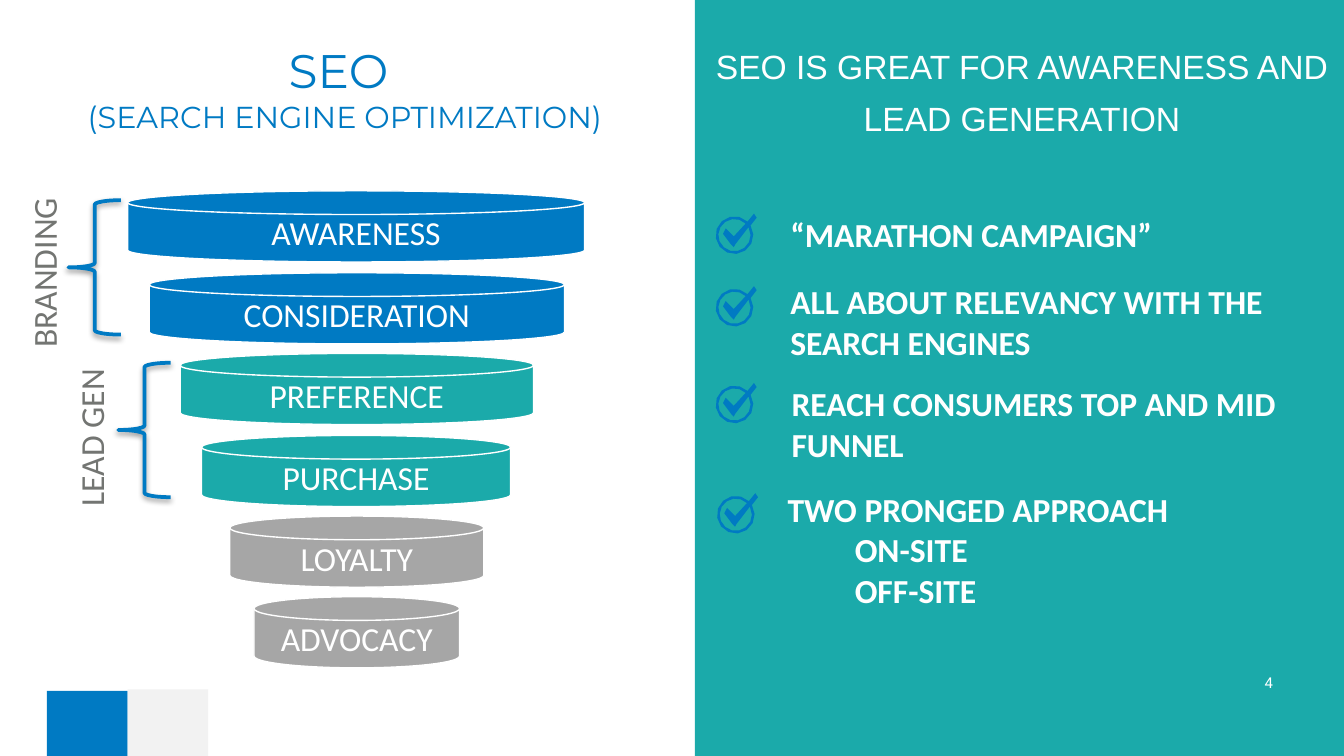
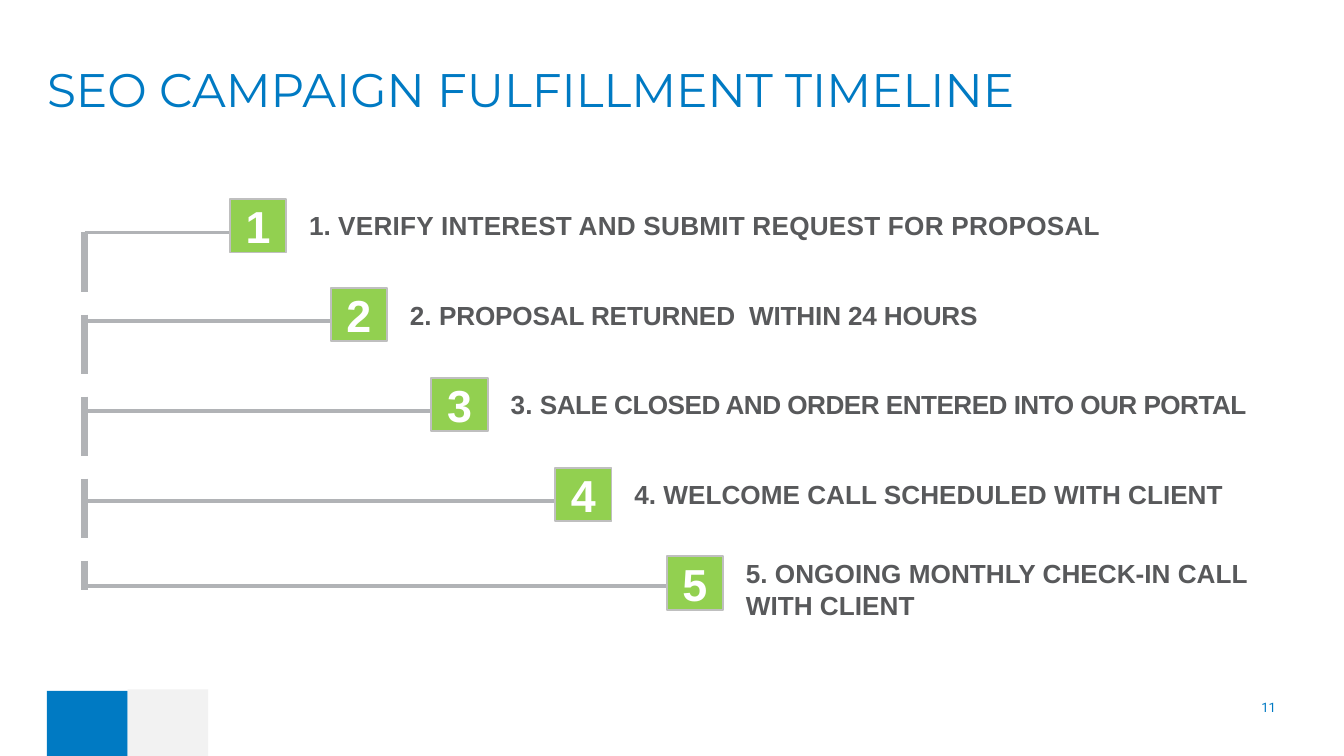
import math

import lxml.etree
import pptx
import pptx.dml.color
import pptx.enum.dml
import pptx.enum.shapes
import pptx.enum.text
import pptx.oxml.ns
import pptx.util

PX = 9144
SHAPES = pptx.enum.shapes.MSO_SHAPE
ALIGN = pptx.enum.text.PP_ALIGN
ANCHOR = pptx.enum.text.MSO_ANCHOR
qn = pptx.oxml.ns.qn

COLORS = {
    "blue": "007AC3",
    "teal": "1BAAAA",
    "gray": "A6A6A6",
    "pale": "F2F2F2",
    "white": "FFFFFF",
    "caption": "737572",
    "ink": "58595B",
    "rail": "B1B3B6",
    "green": "92D050",
    "edge": "BFBFBF",
    "black": "000000",
}

STYLES = {
    "title": ("blue", {"name": "Montserrat", "size": 25.2}),
    "subtitle": ("blue", {"name": "Montserrat", "size": 16.2}),
    "headline": ("white", {"name": "Arial", "size": 18}),
    "stage": ("white", {"name": "Calibri", "size": 18}),
    "phase": ("caption", {"name": "Calibri", "size": 18}),
    "point": ("white", {"name": "Calibri", "size": 18, "bold": True}),
    "badge": ("white", {"name": "Arial", "size": 24, "bold": True}),
    "step": ("ink", {"name": "Arial", "size": 14, "bold": True}),
    "number on panel": ("white", {"name": "Roboto", "size": 8}),
    "number": ("blue", {"name": "Roboto", "size": 7}),
}


def px(length):
    return pptx.util.Emu(round(length * PX))


def rgb(color):
    return pptx.dml.color.RGBColor.from_string(COLORS[color])


def assign(target, values):
    for attribute, value in values.items():
        setattr(target, attribute, value)


class Deck:
    def __init__(self):
        self.presentation = pptx.Presentation()
        self.presentation.slide_width = px(1000)
        self.presentation.slide_height = px(562.5)

    def start(self, layout):
        self.slide = self.presentation.slides.add_slide(
            self.presentation.slide_layouts.get_by_name(layout))
        self.shapes = self.slide.shapes
        self.block((35, 514, 60, 50), "blue")
        self.block((95, 513, 60, 50), "pale")

    def finish_shape(self, shape, fill=None, line=None, width=0.75):
        shape.shadow.inherit = False
        if fill:
            shape.fill.solid()
            shape.fill.fore_color.rgb = rgb(fill)
        else:
            shape.fill.background()
        if line:
            shape.line.color.rgb = rgb(line)
            shape.line.width = pptx.util.Pt(width)
        else:
            shape.line.fill.background()
        return shape

    def block(self, box, fill=None, line=None, width=0.75, kind=SHAPES.RECTANGLE):
        shape = self.shapes.add_shape(kind, *map(px, box))
        return self.finish_shape(shape, fill, line, width)

    def frame(self, shape, insets=(10, 5), anchor=ANCHOR.TOP, wrap=True):
        across, down = map(px, insets)
        assign(shape.text_frame, {
            "margin_left": across, "margin_right": across,
            "margin_top": down, "margin_bottom": down,
            "vertical_anchor": anchor, "word_wrap": wrap,
            "auto_size": pptx.enum.text.MSO_AUTO_SIZE.NONE,
        })

    def run(self, paragraph, words, style, tracking=0):
        run = paragraph.add_run()
        run.text = words
        color, values = STYLES[style]
        assign(run.font, {**values, "size": pptx.util.Pt(values["size"])})
        run.font.color.rgb = rgb(color)
        if tracking:
            run.font._element.set("spc", str(tracking))

    def paragraph(self, shape, words, style, align=ALIGN.LEFT, before=0, spacing=1.0):
        text = shape.text_frame
        paragraph = text.paragraphs[0] if not text.text else text.add_paragraph()
        assign(paragraph, {"alignment": align, "line_spacing": spacing,
                           "space_before": pptx.util.Pt(before)})
        self.run(paragraph, words, style)
        return paragraph

    def label(self, box, words, style, align=ALIGN.LEFT, spacing=1.0, **framing):
        shape = self.shapes.add_textbox(*map(px, box))
        self.frame(shape, **framing)
        self.paragraph(shape, words, style, align, spacing=spacing)
        return shape

    def place(self, shape, box):
        assign(shape, dict(zip(("left", "top", "width", "height"), map(px, box))))
        self.frame(shape)

    def title(self, box, words, subtitle=None, align=ALIGN.LEFT):
        heading = self.shapes.title
        self.place(heading, box)
        paragraph = self.paragraph(heading, words, "title", align)
        if subtitle:
            paragraph.add_line_break()
            lxml.etree.SubElement(paragraph._p[-1], qn("a:rPr"), sz="2520")
            self.run(paragraph, subtitle, "subtitle")

    def points(self, box, items):
        body = self.slide.placeholders[1]
        body.element.getparent().append(body.element)
        self.place(body, box)
        for words, before, indent in items:
            paragraph = self.paragraph(body, words, "point", before=before)
            properties = paragraph._p.get_or_add_pPr()
            properties.set("marL", str(px(indent)))
            properties.set("indent", "0")
            lxml.etree.SubElement(properties, qn("a:buNone"))

    def page_number(self, top, number, style):
        self.label((925, top, 38, 30), number, style, ALIGN.CENTER, anchor=ANCHOR.MIDDLE)

    def brace(self, box):
        brace = self.block(box, line="blue", width=2, kind=SHAPES.LEFT_BRACE)
        effects = brace.element.spPr.find(qn("a:effectLst"))
        shadow = lxml.etree.SubElement(effects, qn("a:outerShdw"), blurRad="39370",
                                       dist="20320", dir="5400000", rotWithShape="0")
        tint = lxml.etree.SubElement(shadow, qn("a:srgbClr"), val=COLORS["black"])
        lxml.etree.SubElement(tint, qn("a:alpha"), val="38000")

    def check(self, left, top):
        def arc(radius, first, last, steps=12):
            turns = [math.radians(first + (last - first) * i / steps)
                     for i in range(steps + 1)]
            return [(13.5 + radius * math.cos(t), 16 + radius * math.sin(t)) for t in turns]

        ring = [(30, 3), (28, 0)] + arc(14, -46, -391)
        tick = arc(12, 0, 314) + [(13, 17), (7, 11), (5, 15), (11, 23),
                                  (13, 25), (14, 23), (24, 10)]
        ring, tick = ([(px(left + x), px(top + y)) for x, y in outline]
                      for outline in (ring, tick))
        builder = self.shapes.build_freeform(*ring[0])
        builder.add_line_segments(ring[1:])
        builder.move_to(*tick[0])
        builder.add_line_segments(tick[1:])
        self.finish_shape(builder.convert_to_shape(), "blue")

    def rule(self, start, end, width, dash=None):
        rule = self.shapes.add_connector(
            pptx.enum.shapes.MSO_CONNECTOR.STRAIGHT, *map(px, start + end))
        rule.line.color.rgb = rgb("rail")
        assign(rule.line, {"width": pptx.util.Pt(width), "dash_style": dash})
        lxml.etree.SubElement(rule.element.spPr, qn("a:effectLst"))


def build_funnel(deck):
    deck.start("Title and Content")
    deck.block((517, 0, 483, 563), "teal")
    deck.label((521, 21, 479, 86), "SEO IS GREAT FOR AWARENESS AND LEAD GENERATION",
               "headline", ALIGN.CENTER, spacing=1.3, insets=(7, 4))
    deck.page_number(493, "4", "number on panel")
    deck.title((25, 26, 463, 36), "SEO ", "(SEARCH ENGINE OPTIMIZATION)", ALIGN.CENTER)

    stages = [
        ("AWARENESS", 340, "blue"),
        ("CONSIDERATION", 309, "blue"),
        ("PREFERENCE", 263, "teal"),
        ("PURCHASE", 230, "teal"),
        ("LOYALTY", 189, "gray"),
        ("ADVOCACY", 153, "gray"),
    ]
    for i, (stage, width, fill) in enumerate(stages):
        disk = deck.block((265 - width // 2, round(142.4 + 60.4 * i), width, 53),
                          fill, "white", kind=SHAPES.FLOWCHART_MAGNETIC_DISK)
        deck.frame(disk, anchor=ANCHOR.MIDDLE)
        deck.paragraph(disk, stage, "stage", ALIGN.CENTER)

    for phase, brace, box in (
        ("BRANDING", (51, 149, 39, 100), (-34, 182, 133, 40)),
        ("LEAD GEN", (88, 270, 39, 100), (6, 305, 123, 40)),
    ):
        deck.brace(brace)
        deck.label(box, phase, "phase", wrap=False).rotation = 270

    for left, top in ((533, 159), (533, 213), (533, 285), (534, 367)):
        deck.check(left, top)
    deck.points((576, 154, 416, 306), [
        ("“MARATHON CAMPAIGN”", 0, 2),
        ("ALL ABOUT RELEVANCY WITH THE SEARCH ENGINES", 14.5, 2),
        ("REACH CONSUMERS TOP AND MID FUNNEL", 11.5, 3),
        ("TWO PRONGED APPROACH", 13.5, 0),
        ("ON-SITE", 0, 50),
        ("OFF-SITE", 0, 50),
    ])


def build_timeline(deck):
    deck.start("Title Only")
    deck.page_number(511, "11", "number")
    deck.title((25, 40, 938, 36), "SEO CAMPAIGN FULFILLMENT TIMELINE")

    rail = 63
    deck.rule((rail, 173), (rail, 439), 4, pptx.enum.dml.MSO_LINE.LONG_DASH)
    steps = [
        ("VERIFY INTEREST AND SUBMIT REQUEST FOR PROPOSAL", 171, 173, 156, 664, 10),
        ("PROPOSAL RETURNED  WITHIN 24 HOURS", 246, 239, 223, 489, -10),
        ("SALE CLOSED AND ORDER ENTERED INTO OUR PORTAL", 321, 306, 289, 558, -30),
        ("WELCOME CALL SCHEDULED WITH CLIENT", 413, 373, 356, 492, 0),
        ("ONGOING MONTHLY CHECK-IN CALL WITH CLIENT", 496, 436, 415, 408, 0),
    ]
    for i, (step, left, level, top, width, tracking) in enumerate(steps):
        number = str(i + 1)
        deck.rule((rail, level), (left, level), 2)
        badge = deck.block((left, round(148 + 66.5 * i), 42, 40), "green", "edge", 1)
        deck.frame(badge, insets=(0, 0))
        deck.paragraph(badge, number, "badge", ALIGN.CENTER)
        height = 47 if number == "5" else 24
        caption = deck.label((left + 58, top, width, height), f"{number}. ", "step",
                             insets=(1, 0))
        deck.run(caption.text_frame.paragraphs[0], step, "step", tracking)


def main():
    deck = Deck()
    build_funnel(deck)
    build_timeline(deck)
    deck.presentation.save("out.pptx")


if __name__ == "__main__":
    main()
